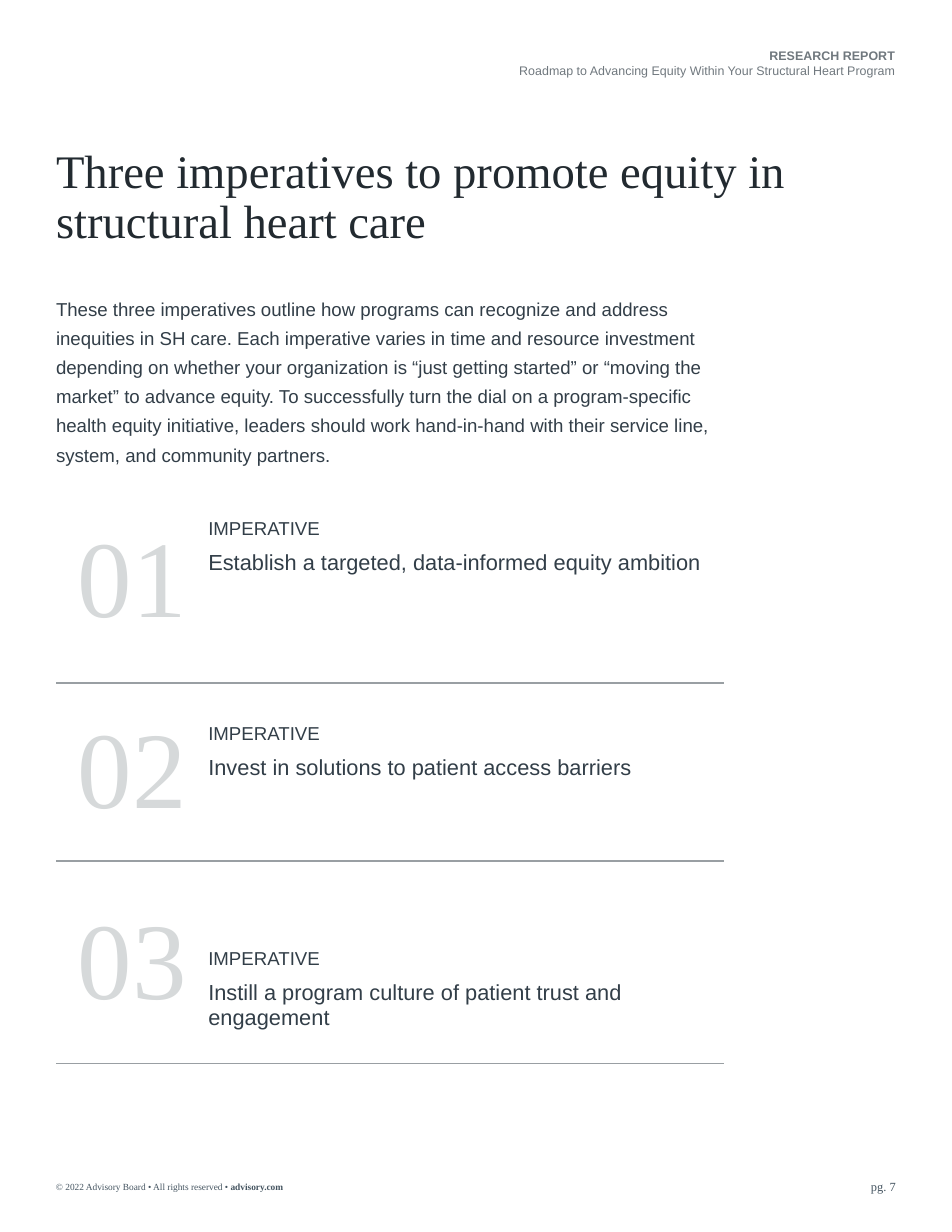
from lxml.etree import SubElement
from pptx import Presentation
from pptx.dml.color import RGBColor
from pptx.enum.shapes import MSO_SHAPE
from pptx.enum.text import MSO_ANCHOR, MSO_AUTO_SIZE, PP_ALIGN
from pptx.oxml.ns import qn
from pptx.util import Inches, Pt

SANS, SERIF = "Arial", "Times New Roman"
INK, DARK, GREY, SLATE = "323E48", "222A30", "70787E", "445460"
PALE, RULE, WHITE = "D6D9DA", "999FA3", "FFFFFF"

TITLE = "Three imperatives to promote equity in structural heart care"
INTRO = (
    "These three imperatives outline how programs can recognize and address "
    "inequities in SH care. Each imperative varies in time and resource "
    "investment depending on whether your organization is “just getting "
    "started” or “moving the market” to advance equity. To successfully turn "
    "the dial on a program-specific health equity initiative, leaders should "
    "work hand-in-hand with their service line, system, and community partners."
)
# Number, imperative, height of label row, height of text row, bottom inset
STEPS = [
    ("01", "Establish a targeted, data-informed equity ambition", 0.55, 1.26, 0.1),
    ("02", "Invest in solutions to patient access barriers", 0.55, 1.04, 0.3),
    ("03", "Instill a program culture of patient trust and engagement", 0.97, 0.84, 0.3),
]
BANNER = [("RESEARCH REPORT", True)]
# Runs of (text, bold), place, format
NOTES = [
    ([("Roadmap to Advancing Equity Within Your Structural Heart Program", False)],
     (4.5, 0.58, 3.5, 0.12),
     dict(size=8, color=GREY, align=PP_ALIGN.RIGHT, lead=0.9)),
    ([("© 2022 Advisory Board • All rights reserved • ", False),
      ("advisory.com", True)], (0.5, 10.55, 2.26, 0.1),
     dict(size=6, color=SLATE, font=SERIF)),
    ([("pg. 7", False)], (7.39, 10.53, 0.61, 0.13),
     dict(size=8, color=SLATE, font=SERIF, align=PP_ALIGN.RIGHT)),
]


def paint(target, color):
    target.rgb = RGBColor.from_string(color)


def write(frame, text, size=12, color=INK, font=SANS, align=PP_ALIGN.LEFT, lead=1.0):
    """Fill the first paragraph with a string or a list of (text, bold) runs."""
    para = frame.paragraphs[0]
    para.alignment, para.line_spacing = align, lead
    para.space_before = Pt(0)
    for part, bold in [(text, False)] if isinstance(text, str) else text:
        run = para.add_run()
        run.text = part
        run.font.name, run.font.size, run.font.bold = font, Pt(size), bold
        paint(run.font.color, color)


def place(shape, box, anchor=MSO_ANCHOR.TOP):
    """Move a shape and clear its insets."""
    shape.left, shape.top, shape.width, shape.height = map(Inches, box)
    frame = shape.text_frame
    frame.margin_left = frame.margin_top = frame.margin_right = frame.margin_bottom = 0
    frame.word_wrap, frame.auto_size = True, MSO_AUTO_SIZE.NONE
    frame.vertical_anchor = anchor
    return frame


def style(cell, top=0.1, bottom=0.1, anchor=MSO_ANCHOR.TOP, edges=""):
    """Set insets, anchor and ruled edges; other edges stay bare."""
    cell.margin_left = cell.margin_right = 0
    cell.margin_top, cell.margin_bottom = Inches(top), Inches(bottom)
    cell.vertical_anchor = anchor
    props = cell._tc.get_or_add_tcPr()
    for side in "LRTB":
        line = SubElement(props, qn("a:ln" + side), w=str(Pt(1)))
        if side in edges:
            fill = SubElement(line, qn("a:solidFill"))
            SubElement(fill, qn("a:srgbClr"), val=RULE)
        else:
            SubElement(line, qn("a:noFill"))
    cell.fill.background()


def add_steps(slide):
    high = sum(step[2] + step[3] for step in STEPS)
    frame = slide.shapes.add_table(2 * len(STEPS), 2, Inches(0.5), Inches(4.27),
                                   Inches(5.96), Inches(high))
    table = frame.table
    table.first_row = table.horz_banding = False
    table.columns[0].width, table.columns[1].width = Inches(1.36), Inches(4.6)
    for i, (num, text, head, body, foot) in enumerate(STEPS):
        row = 2 * i
        table.rows[row].height = Inches(head)
        table.rows[row + 1].height = Inches(body)
        big, under = table.cell(row, 0), table.cell(row + 1, 0)
        label, goal = table.cell(row, 1), table.cell(row + 1, 1)
        above = "T" if i else ""
        big.merge(under)
        style(big, anchor=MSO_ANCHOR.MIDDLE, edges=above + "B")
        style(under, edges="B")
        style(label, top=0.3, bottom=0, anchor=MSO_ANCHOR.BOTTOM, edges=above)
        style(goal, bottom=foot, edges="B")
        write(big.text_frame, num, size=70, color=PALE, font=SERIF, align=PP_ALIGN.CENTER)
        write(label.text_frame, "IMPERATIVE", lead=1.3)
        write(goal.text_frame, text, size=14)


def add_banner(slide):
    box = (6.87, 0.43, 1.13, 0.13)
    banner = slide.shapes.add_shape(MSO_SHAPE.RECTANGLE, *map(Inches, box))
    banner.shadow.inherit = False
    banner.fill.solid()
    paint(banner.fill.fore_color, WHITE)
    banner.line.fill.background()
    frame = place(banner, box)
    frame.word_wrap = False
    write(frame, BANNER, size=8, color=GREY)


def main():
    deck = Presentation()
    deck.slide_width, deck.slide_height = Inches(8.5), Inches(11)
    slide = deck.slides.add_slide(deck.slide_layouts[1])

    title = place(slide.shapes.title, (0.5, 1.31, 7.5, 0.91), MSO_ANCHOR.BOTTOM)
    write(title, TITLE, size=30, color=DARK, font=SERIF, lead=0.9)

    intro = place(slide.placeholders[1], (0.5, 2.6, 5.96, 1.89))
    props = intro.paragraphs[0]._p.get_or_add_pPr()
    props.set("marL", "0")
    props.set("indent", "0")
    SubElement(props, qn("a:buNone"))
    write(intro, INTRO, lead=1.3)

    add_steps(slide)
    add_banner(slide)
    for runs, box, look in NOTES:
        note = slide.shapes.add_textbox(*map(Inches, box))
        write(place(note, box), runs, **look)
    deck.save("out.pptx")


if __name__ == "__main__":
    main()
